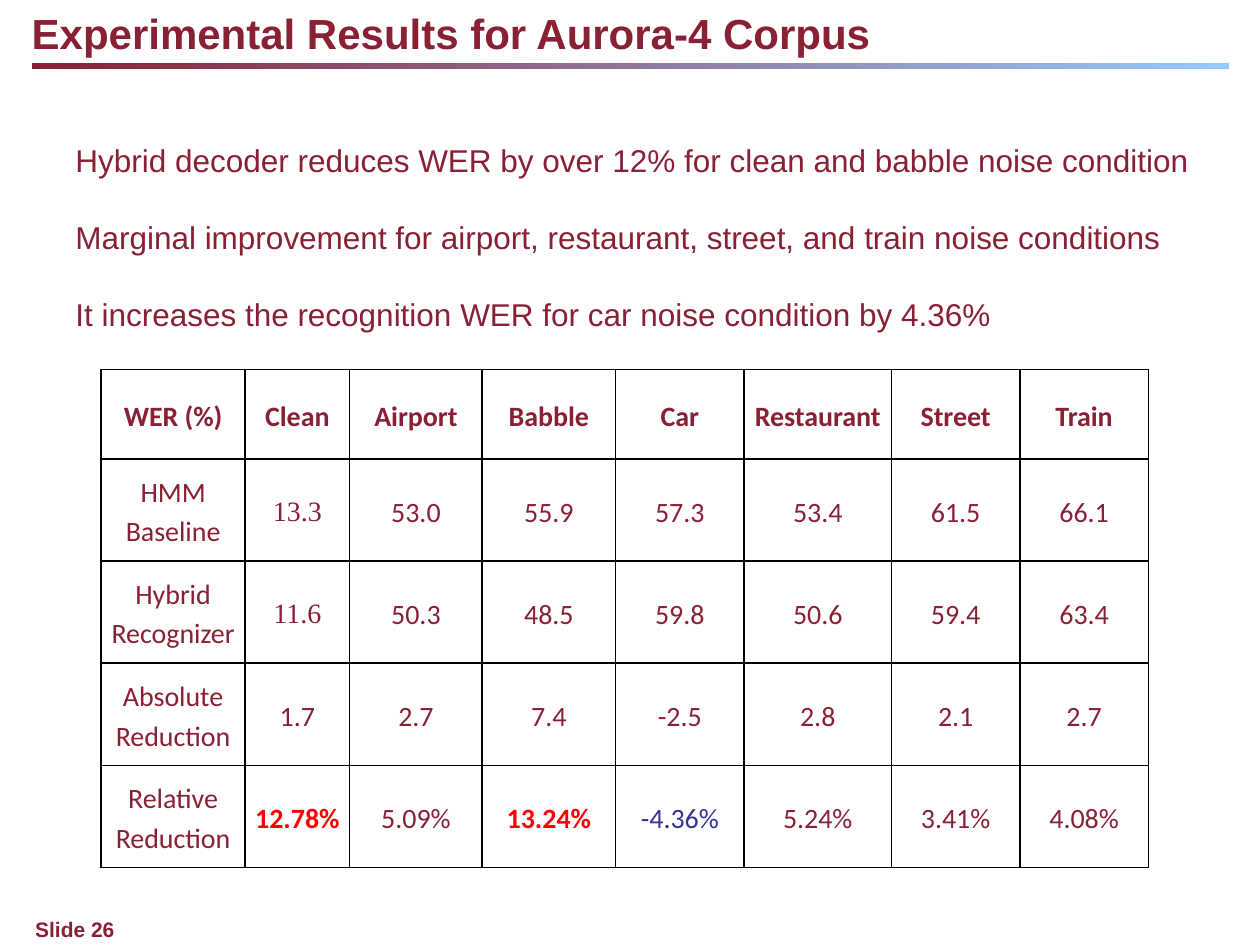
from dataclasses import dataclass

from lxml import etree
from pptx import Presentation
from pptx import util as u
from pptx.dml.color import RGBColor
from pptx.enum import shapes, text
from pptx.oxml.ns import qn


@dataclass(frozen=True)
class Theme:
    maroon: str = "892034"
    sky: str = "95CAFF"
    red: str = "FF0000"
    blue: str = "333399"
    border: str = "000000"
    sans: str = "Arial"
    grid: str = "Calibri"
    serif: str = "Times New Roman"
    title: int = 24
    body: int = 18
    cell: int = 16
    footer: int = 12


T = Theme()

POINTS = [
    "Hybrid decoder reduces WER by over 12% for clean and babble noise condition",
    "Marginal improvement for airport, restaurant, street, and train noise conditions",
    "It increases the recognition WER for car noise condition by 4.36%",
]
WER_ROWS = [
    ["WER (%)", "Clean", "Airport", "Babble", "Car", "Restaurant", "Street", "Train"],
    ["HMM Baseline", "13.3", "53.0", "55.9", "57.3", "53.4", "61.5", "66.1"],
    ["Hybrid Recognizer", "11.6", "50.3", "48.5", "59.8", "50.6", "59.4", "63.4"],
    ["Absolute Reduction", "1.7", "2.7", "7.4", "-2.5", "2.8", "2.1", "2.7"],
    ["Relative Reduction", "12.78%", "5.09%", "13.24%", "-4.36%", "5.24%", "3.41%", "4.08%"],
]
COL_WIDTHS = [2.9, 2.11, 2.67, 2.69, 2.59, 2.97, 2.59, 2.59]
ROW_HEIGHTS = [1.8] + [2.06] * 4
HIGHLIGHTS = {
    (1, 1): dict(font=T.serif),
    (2, 1): dict(font=T.serif),
    (4, 1): dict(color=T.red, bold=True),
    (4, 3): dict(color=T.red, bold=True),
    (4, 4): dict(color=T.blue),
}


def write(p, words, font=T.sans, size=T.body, color=T.maroon, bold=False,
          align=None, spacing=None, before=None):
    p.alignment = align
    p.line_spacing = spacing
    if before is not None:
        p.space_before = u.Pt(before)
    r = p.add_run()
    r.text = words
    r.font.name, r.font.size, r.font.bold = font, u.Pt(size), bold
    r.font.color.rgb = RGBColor.from_string(color)


def add_text(slide, box, lines, inset=(0, 0), gap=0, **fmt):
    tf = slide.shapes.add_textbox(*map(u.Cm, box)).text_frame
    tf.word_wrap = True
    tf.margin_left = tf.margin_right = u.Cm(inset[0])
    tf.margin_top = tf.margin_bottom = u.Cm(inset[1])
    for i, line in enumerate(lines):
        p = tf.add_paragraph() if i else tf.paragraphs[0]
        write(p, line, before=gap if i else None, **fmt)


def add_header(slide, left, top, width, title):
    bar = slide.shapes.add_shape(shapes.MSO_SHAPE.RECTANGLE, u.Cm(left),
                                 u.Cm(top + 1.12), u.Cm(width), u.Cm(0.13))
    bar.shadow.inherit = False
    bar.line.fill.background()
    bar.fill.gradient()
    bar.fill.gradient_angle = 0
    for stop, pos, color in zip(bar.fill.gradient_stops, (0, 1), (T.maroon, T.sky)):
        stop.position = pos
        stop.color.rgb = RGBColor.from_string(color)
    add_text(slide, (left, top, width, 1.02), [title], size=T.title, bold=True)


def set_borders(cell):
    tc_pr = cell._tc.get_or_add_tcPr()
    for i, side in enumerate(("lnL", "lnR", "lnT", "lnB")):
        ln = etree.Element(qn(f"a:{side}"), w=str(u.Pt(1)))
        fill = etree.SubElement(ln, qn("a:solidFill"))
        etree.SubElement(fill, qn("a:srgbClr"), val=T.border)
        tc_pr.insert(i, ln)


def add_wer_table(slide, left, top):
    frame = slide.shapes.add_table(
        len(WER_ROWS), len(COL_WIDTHS), u.Cm(left), u.Cm(top),
        u.Cm(sum(COL_WIDTHS)), u.Cm(sum(ROW_HEIGHTS)))
    table = frame.table
    table.first_row = table.horz_banding = False
    for col, width in zip(table.columns, COL_WIDTHS):
        col.width = u.Cm(width)
    for row, height in zip(table.rows, ROW_HEIGHTS):
        row.height = u.Cm(height)
    for i, values in enumerate(WER_ROWS):
        for j, value in enumerate(values):
            cell = table.cell(i, j)
            cell.fill.background()
            set_borders(cell)
            cell.margin_left = cell.margin_right = u.Cm(0.17)
            cell.margin_top = cell.margin_bottom = 0
            cell.vertical_anchor = text.MSO_ANCHOR.MIDDLE
            fmt = dict(font=T.grid, size=T.cell, bold=i == 0,
                       align=text.PP_ALIGN.CENTER, spacing=1.15)
            write(cell.text_frame.paragraphs[0], value,
                  **(fmt | HIGHLIGHTS.get((i, j), {})))


def main():
    prs = Presentation()
    prs.slide_width, prs.slide_height = u.Cm(25.4), u.Cm(19.05)
    slide = prs.slides.add_slide(prs.slide_layouts[6])
    add_header(slide, 0.64, 0.15, 24.13, "Experimental Results for Aurora-4 Corpus")
    add_text(slide, (1.27, 2.72, 23.09, 4.11), POINTS, inset=(0.25, 0.13), gap=22.4)
    add_wer_table(slide, 2.04, 7.45)
    add_text(slide, (0.71, 18.47, 22.66, 0.51), ["Slide 26"], size=T.footer, bold=True)
    prs.save("out.pptx")


if __name__ == "__main__":
    main()
